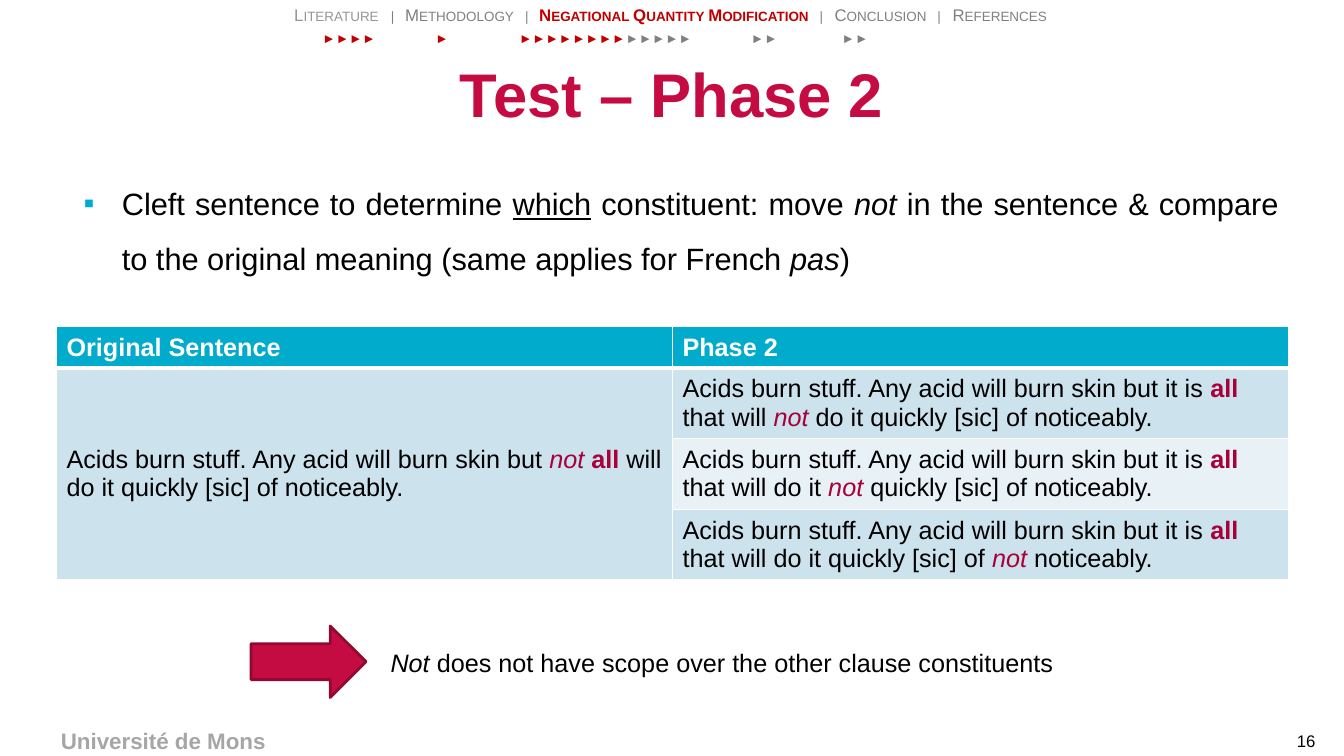
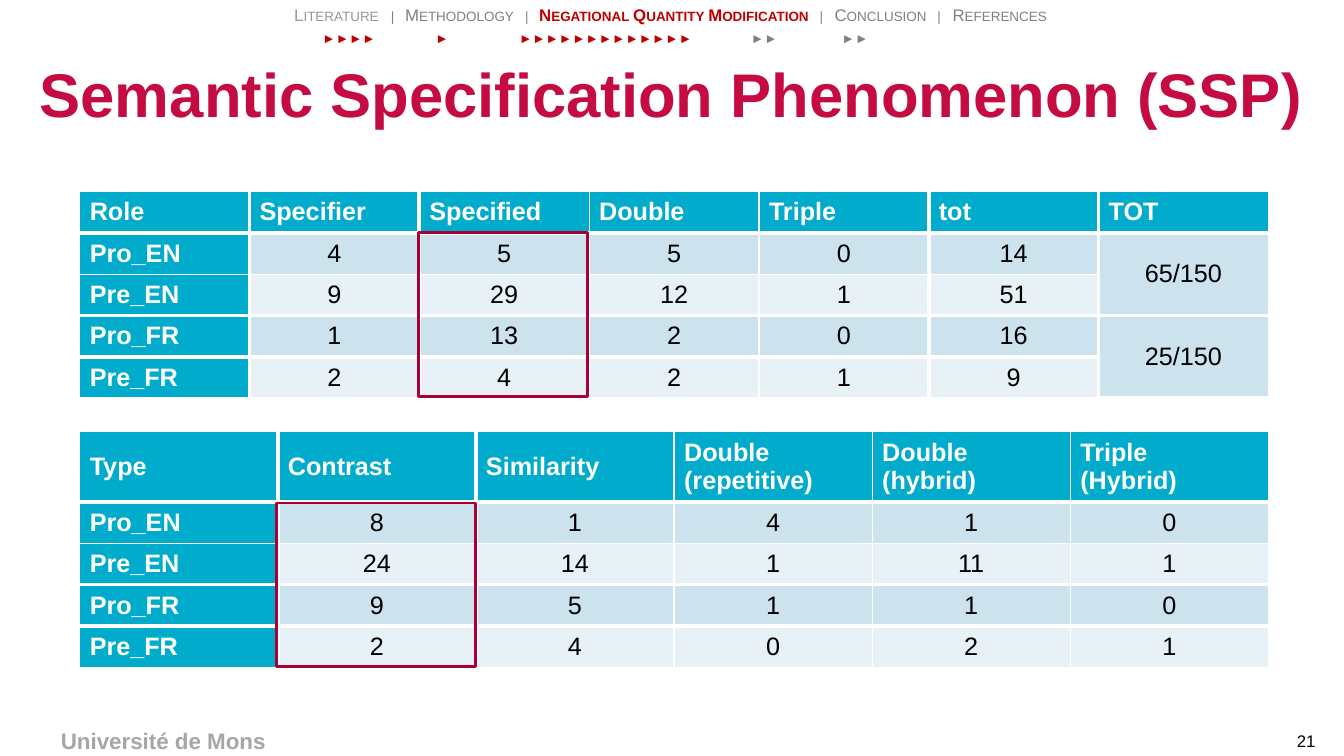
from dataclasses import dataclass
from typing import NamedTuple

from lxml.etree import SubElement as Sub
from pptx import Presentation
from pptx.dml.color import RGBColor
from pptx.enum.shapes import MSO_SHAPE as Shape
from pptx.enum.text import MSO_ANCHOR as Anchor, PP_ALIGN as Align
from pptx.oxml.ns import qn
from pptx.util import Inches, Pt

FONT = "Arial"
RED, DEEP, WINE, LIVE = "C40C42", "910931", "A80039", "C00000"
CYAN, PALE, MIST = "00ABCC", "CCE2EC", "E7F1F6"
BLACK, WHITE, GREY, SOFT, FOOT = "000000", "FFFFFF", "808080", "969696", "A6A6A6"
WIDE, HIGH = 13.33, 7.5
NAV_TABS = (0.96, 1.10, 2.29, 2.43, 5.21, 5.36, 6.38, 6.53)
STEP_TABS = (1.12, 1.95, 4.25, 5.15)
STEPS = (4, 1, 13, 2, 2)


class Box(NamedTuple):
    left: float
    top: float
    width: float
    height: float

    def emu(self) -> list:
        return [Inches(n) for n in self]


class Run(NamedTuple):
    text: str
    color: str | None = None
    bold: bool | None = None
    italic: bool | None = None
    under: bool | None = None
    small: bool = False


@dataclass
class Style:
    size: float
    color: str = BLACK
    bold: bool = False
    align: Align = Align.LEFT
    space: float | None = None


@dataclass
class Grid:
    """A table; thick lines follow the listed rows and columns."""
    box: Box
    rows: list
    heights: list
    thick_rows: tuple
    thick_cols: tuple = ()
    merges: tuple = ()
    side: bool = False


def rgb(code: str) -> RGBColor:
    return RGBColor.from_string(code)


def write(para, runs, style: Style) -> None:
    para.alignment = style.align
    if style.space:
        para.line_spacing = style.space
    font = para.font
    font.name, font.size, font.bold = FONT, Pt(style.size), style.bold
    font.color.rgb = rgb(style.color)
    for item in runs:
        run = para.add_run()
        run.text = item.text
        if item.color:
            run.font.color.rgb = rgb(item.color)
        if item.bold:
            run.font.bold = True
        if item.italic:
            run.font.italic = True
        if item.under:
            run.font.underline = True
        if item.small:
            run.font._element.set("cap", "small")


def add_text(slide, box: Box, runs, style: Style, anchor=Anchor.TOP,
             tabs=(), bullet: bool = False) -> None:
    frame = slide.shapes.add_textbox(*box.emu()).text_frame
    frame.word_wrap = True
    frame.vertical_anchor = anchor
    para = frame.paragraphs[0]
    props = para._p.get_or_add_pPr()
    if bullet:
        props.set("marL", str(Inches(0.57)))
        props.set("indent", str(Inches(-0.38)))
        tint = Sub(props, qn("a:buClr"))
        Sub(tint, qn("a:srgbClr"), val=CYAN)
        Sub(props, qn("a:buFont"), typeface=FONT)
        Sub(props, qn("a:buChar"), char="▪")
    if tabs:
        stops = Sub(props, qn("a:tabLst"))
        for stop in tabs:
            Sub(stops, qn("a:tab"), pos=str(Inches(stop)), algn="l")
    write(para, runs, style)


def add_shape(slide, kind, box: Box, line: str, fill: str | None = None) -> None:
    shape = slide.shapes.add_shape(kind, *box.emu())
    shape.shadow.inherit = False
    shape.line.color.rgb = rgb(line)
    shape.line.width = Pt(2)
    if fill:
        shape.fill.solid()
        shape.fill.fore_color.rgb = rgb(fill)
    else:
        shape.fill.background()


def add_edges(cell, grid: Grid, row: int, col: int) -> None:
    props = cell._tc.get_or_add_tcPr()
    thick = {"L": col - 1 in grid.thick_cols, "R": col in grid.thick_cols,
             "T": row - 1 in grid.thick_rows, "B": row in grid.thick_rows}
    for edge, heavy in thick.items():
        line = Sub(props, qn(f"a:ln{edge}"), w=str(Pt(3 if heavy else 1)))
        Sub(Sub(line, qn("a:solidFill")), qn("a:srgbClr"), val=WHITE)


def add_grid(slide, grid: Grid) -> None:
    count = len(grid.rows[0])
    table = slide.shapes.add_table(len(grid.rows), count, *grid.box.emu()).table
    for col in table.columns:
        col.width = Inches(grid.box.width / count)
    for row, height in zip(table.rows, grid.heights):
        row.height = Inches(height)
    for r, line in enumerate(grid.rows):
        for c, value in enumerate(line):
            cell = table.cell(r, c)
            head = r == 0 or (grid.side and c == 0)
            add_edges(cell, grid, r, c)
            cell.fill.solid()
            cell.fill.fore_color.rgb = rgb(CYAN if head else PALE if r % 2 else MIST)
            cell.vertical_anchor = Anchor.MIDDLE
            if value is None:
                continue
            if head:
                style = Style(18, WHITE, True)
            else:
                style = Style(18, align=Align.CENTER if grid.side else Align.LEFT)
            parts = [[Run(t)] for t in value.split("\n")] if isinstance(value, str) else [value]
            frame = cell.text_frame
            for i, runs in enumerate(parts):
                write(frame.add_paragraph() if i else frame.paragraphs[0], runs, style)
    for top, end, col in grid.merges:
        table.cell(top, col).merge(table.cell(end, col))


def add_nav(slide, done: int) -> None:
    """Section names, and one arrow per slide; done counts the current section's."""
    add_text(slide, Box(2.82, 0, 10, 0.25), [
        Run("Literature", SOFT, small=True),
        Run("\t|\tMethodology\t|\t", small=True),
        Run("Negational Quantity Modification", LIVE, True, small=True),
        Run("\t|\tConclusion\t|\tReferences", small=True),
    ], Style(12, GREY), tabs=NAV_TABS)
    marks = "\t".join("►" * n for n in STEPS)
    cut = STEPS[0] + STEPS[1] + 2 + done
    add_text(slide, Box(3.1, 0.22, 10.23, 0.52),
             [Run(marks[:cut], LIVE, small=True), Run(marks[cut:], small=True)],
             Style(12, GREY), tabs=STEP_TABS)


def add_page(deck, title: str, number: int, done: int):
    slide = deck.slides.add_slide(deck.slide_layouts[6])
    add_text(slide, Box(0, 7.16, 3.24, 0.37), [Run("Université de Mons")],
             Style(16, FOOT, True, Align.CENTER))
    add_text(slide, Box(0, 0.3, WIDE, 1.25), [Run(title)],
             Style(44, RED, True, Align.CENTER), Anchor.MIDDLE)
    add_text(slide, Box(12.58, 7.2, 0.75, 0.3), [Run(str(number))],
             Style(12, align=Align.CENTER), Anchor.MIDDLE)
    add_nav(slide, done)
    return slide


def cleft(before: str, after: str) -> list:
    return [Run("Acids burn stuff. Any acid will burn skin but it is "),
            Run("all", WINE, True), Run(f" that will {before}"),
            Run("not", WINE, italic=True), Run(f" {after}noticeably.")]


def add_test(deck) -> None:
    slide = add_page(deck, "Test – Phase 2", 16, 8)
    add_text(slide, Box(0.54, 1.6, 12.24, 1.4), [
        Run("Cleft sentence to determine "), Run("which", under=True),
        Run(" constituent: move "), Run("not ", italic=True),
        Run("in the sentence & compare to the original meaning (same applies for French "),
        Run("pas", italic=True), Run(")"),
    ], Style(22, align=Align.JUSTIFY, space=1.5), bullet=True)
    source = [Run("Acids burn stuff. Any acid will burn skin but "),
              Run("not ", WINE, italic=True), Run("all ", WINE, True),
              Run("will do it quickly [sic] of noticeably.")]
    add_grid(slide, Grid(Box(0.56, 3.24, 12.22, 2.39), [
        ["Original Sentence", "Phase 2"],
        [source, cleft("", "do it quickly [sic] of ")],
        [None, cleft("do it ", "quickly [sic] of ")],
        [None, cleft("do it quickly [sic] of ", "")],
    ], [0.41] + [0.66] * 3, thick_rows=(0,), merges=((1, 3, 0),)))
    add_text(slide, Box(1, 6.22, 12.32, 0.49), [
        Run("Not ", italic=True),
        Run("does not have scope over the other clause constituents"),
    ], Style(18, align=Align.CENTER, space=1.5))
    add_shape(slide, Shape.RIGHT_ARROW, Box(2.49, 6.21, 1.14, 0.71), DEEP, RED)


def add_counts(deck) -> None:
    slide = add_page(deck, "Semantic Specification Phenomenon (SSP)", 21, 13)
    add_grid(slide, Grid(Box(0.79, 1.9, 11.79, 2.03), [
        ["Role", "Specifier", "Specified", "Double", "Triple", "tot", "TOT"],
        ["Pro_EN", "4", "5", "5", "0", "14", "65/150"],
        ["Pre_EN", "9", "29", "12", "1", "51", None],
        ["Pro_FR", "1", "13", "2", "0", "16", "25/150"],
        ["Pre_FR", "2", "4", "2", "1", "9", None],
    ], [0.41] * 5, (0, 2, 3), (0, 1, 4, 5), ((1, 2, 6), (3, 4, 6)), True))
    add_grid(slide, Grid(Box(0.79, 4.28, 11.79, 2.27), [
        ["Type", "Contrast", "Similarity", "Double (repetitive)",
         "Double (hybrid)", "Triple\n(Hybrid)"],
        ["Pro_EN", "8", "1", "4", "1", "0"],
        ["Pre_EN", "24", "14", "1", "11", "1"],
        ["Pro_FR", "9", "5", "1", "1", "0"],
        ["Pre_FR", "2", "4", "0", "2", "1"],
    ], [0.65] + [0.41] * 4, (0, 2, 3), (0, 1), side=True))
    for frame in (Box(4.15, 2.31, 1.68, 1.62), Box(2.74, 4.99, 1.98, 1.62)):
        add_shape(slide, Shape.RECTANGLE, frame, WINE)


def main() -> None:
    deck = Presentation()
    deck.slide_width, deck.slide_height = Inches(WIDE), Inches(HIGH)
    add_test(deck)
    add_counts(deck)
    deck.save("out.pptx")


if __name__ == "__main__":
    main()
